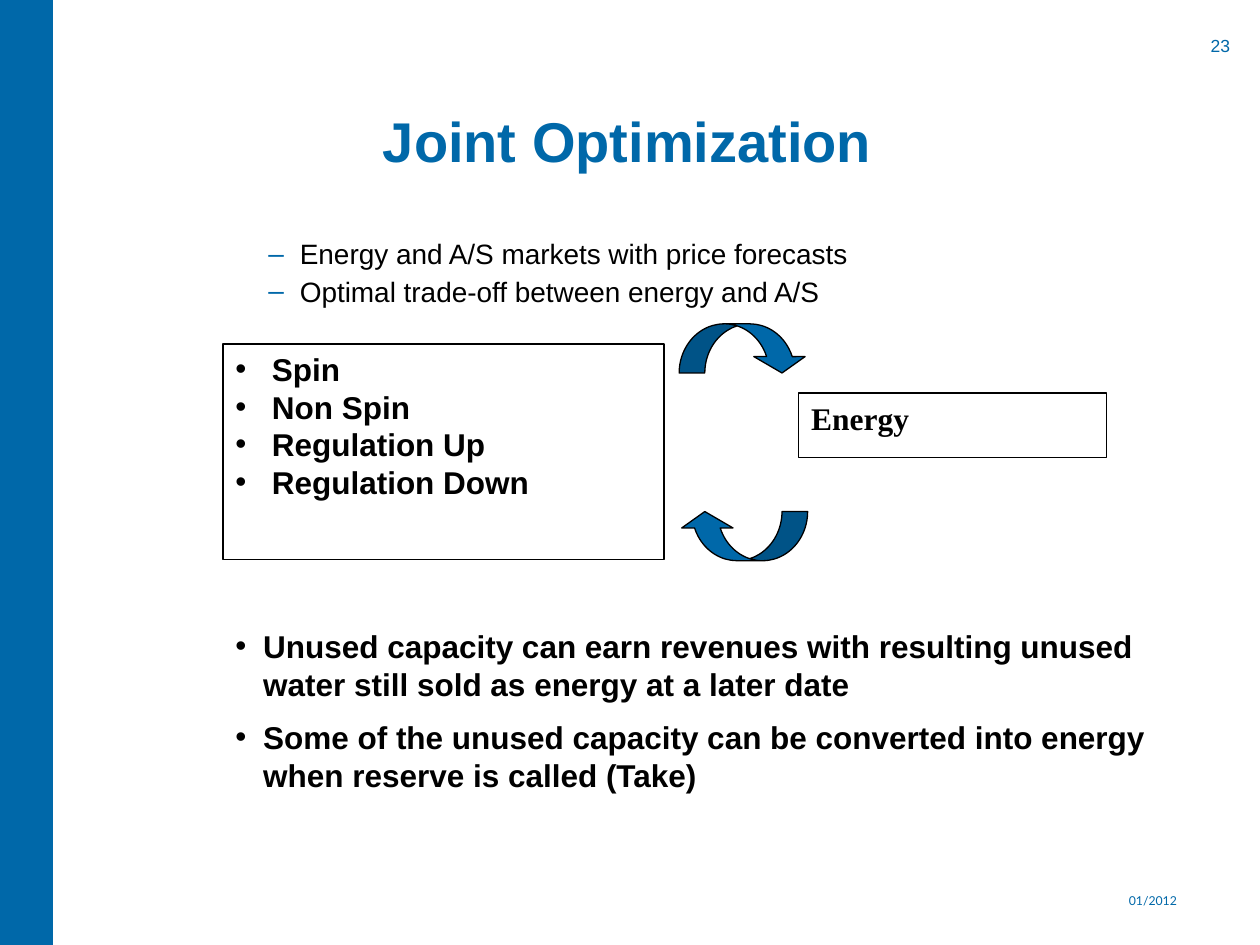
from lxml.etree import SubElement
from pptx import Presentation
from pptx.dml.color import RGBColor
from pptx.enum.shapes import MSO_SHAPE as Shape
from pptx.enum.text import MSO_ANCHOR as Anchor, MSO_AUTO_SIZE as AutoSize, PP_ALIGN as Align
from pptx.oxml.ns import qn
from pptx.util import Inches, Pt

COLORS = {"blue": "0068A9", "black": "000000"}
STRONG = {"size": 18, "bold": True}
LIST = {"line_spacing": Pt(21.5)}


def color(name):
    """Return the named palette colour."""
    return RGBColor.from_string(COLORS[name])


def place(sp, box):
    """Move and size a shape to a box in inches."""
    for name, value in zip(("left", "top", "width", "height"), box):
        setattr(sp, name, Inches(value))


def add_bullet(p, char, bullet_color, margin, hang):
    """Give a paragraph a hanging bullet."""
    pPr = p._p.get_or_add_pPr()
    pPr.set("marL", str(Inches(margin)))
    pPr.set("indent", str(-Inches(hang)))
    clr = SubElement(pPr, qn("a:buClr"))
    SubElement(clr, qn("a:srgbClr"), val=COLORS[bullet_color])
    SubElement(pPr, qn("a:buFont"), typeface="Arial")
    SubElement(pPr, qn("a:buChar"), char=char)


def write(sp, lines, font, para=None, frame=None, bullet=None, gap=0):
    """Fill a shape with formatted paragraphs."""
    tf = sp.text_frame
    for name, value in {"word_wrap": True, "auto_size": AutoSize.NONE,
                        "vertical_anchor": Anchor.TOP, **(frame or {})}.items():
        setattr(tf, name, value)
    fmt = {"name": "Arial", "bold": False, "color": "black", **font}
    for i, line in enumerate(lines):
        p = tf.paragraphs[0] if i == 0 else tf.add_paragraph()
        if bullet:
            add_bullet(p, *bullet)
        for name, value in {"alignment": Align.LEFT, "space_before": Pt(gap if i else 0),
                            **(para or {})}.items():
            setattr(p, name, value)
        r = p.add_run()
        r.text = line
        r.font.color.rgb = color(fmt["color"])
        r.font.size = Pt(fmt["size"])
        for name in ("name", "bold"):
            setattr(r.font, name, fmt[name])


def add_text(s, box, lines, font, **options):
    """Add a text box."""
    sp = s.shapes.add_textbox(*map(Inches, box))
    write(sp, lines, font, **options)


def add_shape(s, kind, box, fill=None, line=None):
    """Add a preset shape with optional fill and outline."""
    sp = s.shapes.add_shape(kind, *map(Inches, box))
    sp.shadow.inherit = False
    if fill:
        sp.fill.solid()
        sp.fill.fore_color.rgb = color(fill)
    else:
        sp.fill.background()
    if line:
        sp.line.color.rgb = color(line)
        sp.line.width = Pt(0.75)
    else:
        sp.line.fill.background()
    return sp


def add_arrow(s, top, rotation):
    """Add a curved arrow linking reserves and energy."""
    sp = add_shape(s, Shape.CURVED_DOWN_ARROW, (5.39, top, 1.02, 0.39), "blue", "black")
    for i, value in enumerate((0.522, 1.044, 0.333)):
        sp.adjustments[i] = value
    sp.rotation = rotation


def main():
    """Build the slide and save it."""
    prs = Presentation()
    prs.slide_width, prs.slide_height = Inches(10), Inches(7.5)
    s = prs.slides.add_slide(prs.slide_layouts[1])
    title, body = s.placeholders

    add_shape(s, Shape.RECTANGLE, (0, 0, 0.42, 7.5), "blue")
    add_text(s, (9.44, 0.23, 0.42, 0.25), ["23"], {"size": 10, "color": "blue"},
             para={"alignment": Align.RIGHT})
    insets = dict.fromkeys(("margin_left", "margin_top", "margin_right", "margin_bottom"), 0)
    add_text(s, (7.04, 6.96, 2.3, 0.38), ["01/2012"],
             {"size": 7, "name": "Lato", "color": "blue"},
             para={"alignment": Align.RIGHT},
             frame={"vertical_anchor": Anchor.MIDDLE, **insets})

    place(title, (0.27, 0.28, 9.42, 1.17))
    write(title, ["Joint Optimization"], {"size": 32, "bold": True, "color": "blue"},
          para={"alignment": Align.CENTER},
          frame={"vertical_anchor": Anchor.BOTTOM, "margin_bottom": Inches(0.07)})
    place(body, (1.77, 1.86, 7.48, 0.87))
    write(body, ["Energy and A/S markets with price forecasts",
                 "Optimal trade-off between energy and A/S"], {"size": 16},
          para={"level": 1, "line_spacing": 0.9}, bullet=("–", "blue", 0.51, 0.25), gap=4)

    reserves = add_shape(s, Shape.RECTANGLE, (1.77, 2.73, 3.5, 1.71), line="black")
    write(reserves, ["Spin", "Non Spin", "Regulation Up", "Regulation Down"], STRONG,
          para=LIST, bullet=("•", "black", 0.29, 0.29))
    energy = add_shape(s, Shape.RECTANGLE, (6.34, 3.12, 2.44, 0.51), line="black")
    write(energy, ["Energy"], {**STRONG, "name": "Times New Roman"})
    for top, rotation in ((2.57, 0), (4.06, 180)):
        add_arrow(s, top, rotation)

    add_text(s, (1.77, 4.93, 7.48, 1.46),
             ["Unused capacity can earn revenues with resulting unused water "
              "still sold as energy at a later date",
              "Some of the unused capacity can be converted into energy "
              "when reserve is called (Take)"], STRONG,
             para=LIST, bullet=("•", "black", 0.22, 0.22), gap=9)
    prs.save("out.pptx")


if __name__ == "__main__":
    main()
